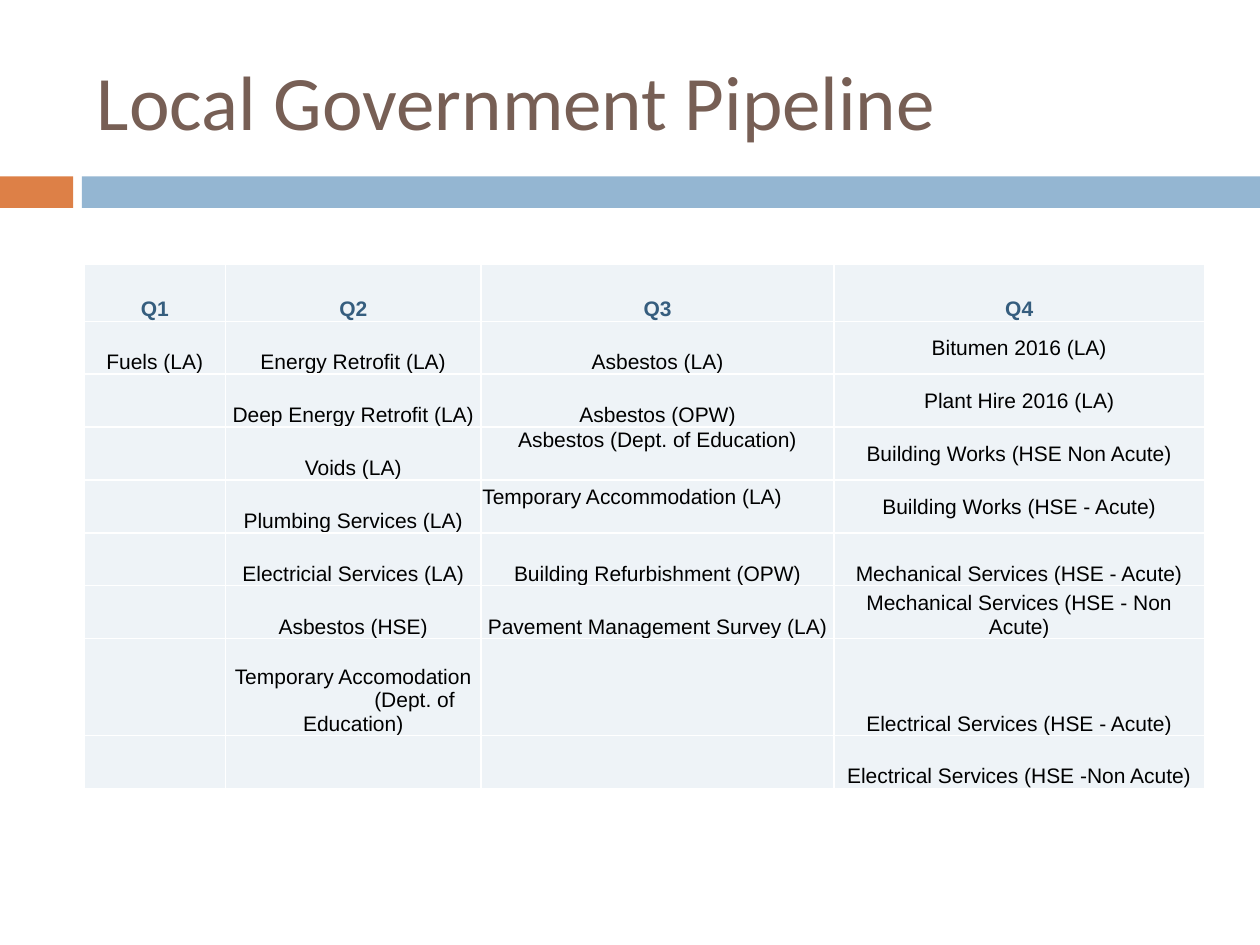
from dataclasses import dataclass

from lxml.etree import SubElement
from pptx import Presentation
from pptx.dml.color import RGBColor
from pptx.enum.shapes import MSO_SHAPE
from pptx.enum.text import MSO_ANCHOR, PP_ALIGN
from pptx.oxml.ns import qn
from pptx.util import Pt


@dataclass(frozen=True)
class Theme:
    orange: str = "DD8047"
    blue: str = "94B6D2"
    title: str = "775F55"
    heading: str = "355D7E"
    text: str = "000000"
    cell: str = "EEF3F7"
    border: str = "FFFFFF"
    title_font: str = "Calibri"
    table_font: str = "Arial"
    title_size: float = 44
    table_size: float = 12
    border_width: float = 1


@dataclass(frozen=True)
class Bar:
    left: float
    width: float
    color: str


@dataclass(frozen=True)
class Entry:
    """Table text; each later line starts a paragraph with a first-line indent."""
    text: str = ""
    anchor: MSO_ANCHOR = MSO_ANCHOR.BOTTOM
    align: PP_ALIGN = PP_ALIGN.CENTER
    margin_bottom: float = 0
    indent: float = 0


THEME = Theme()
PAGE_WIDTH, PAGE_HEIGHT = 720, 540
BAR_TOP, BAR_HEIGHT = 100.8, 18
BARS = [Bar(0, 41.8, THEME.orange), Bar(46.8, 673.2, THEME.blue)]
CONTENT_LEFT = 48.2
TABLE_TOP = 151.2
COLUMN_WIDTHS = [80.6, 146.2, 201.6, 211.7]
HEADER_HEIGHT, ROW_HEIGHT, TALL_HEIGHT = 32.4, 30.24, 55.4
ROW_HEIGHTS = [HEADER_HEIGHT] + [ROW_HEIGHT] * 6 + [TALL_HEIGHT, ROW_HEIGHT]
CELL_MARGIN = 0.7
MIDDLE = MSO_ANCHOR.MIDDLE

QUARTERS = {
    "Q1": [Entry("Fuels (LA)")],
    "Q2": [
        Entry("Energy Retrofit (LA)"),
        Entry("Deep Energy Retrofit (LA)"),
        Entry("Voids (LA)"),
        Entry("Plumbing Services (LA)"),
        Entry("Electricial Services (LA)"),
        Entry("Asbestos (HSE)"),
        Entry("Temporary Accomodation\n(Dept. of Education)", indent=70),
    ],
    "Q3": [
        Entry("Asbestos (LA)"),
        Entry("Asbestos (OPW)"),
        Entry("Asbestos (Dept. of Education)", MSO_ANCHOR.TOP),
        Entry("Temporary Accommodation (LA)", align=PP_ALIGN.LEFT, margin_bottom=13.7),
        Entry("Building Refurbishment (OPW)"),
        Entry("Pavement Management Survey (LA)"),
    ],
    "Q4": [
        Entry("Bitumen 2016 (LA)", MIDDLE),
        Entry("Plant Hire 2016 (LA)", MIDDLE),
        Entry("Building Works (HSE Non Acute)", MIDDLE),
        Entry("Building Works (HSE - Acute)", MIDDLE),
        Entry("Mechanical Services (HSE - Acute)"),
        Entry("Mechanical Services (HSE - Non Acute)"),
        Entry("Electrical Services (HSE - Acute)"),
        Entry("Electrical Services (HSE -Non Acute)"),
    ],
}


def add_span(para, text: str, font: str, size: float, color: str, bold: bool = False) -> None:
    span = para.add_run()
    span.text = text
    span.font.name = font
    span.font.size = Pt(size)
    span.font.bold = bold
    span.font.color.rgb = RGBColor.from_string(color)


def draw_title(page, text: str) -> None:
    box = page.shapes.title
    box.left, box.top, box.width, box.height = Pt(CONTENT_LEFT), Pt(18), Pt(642.2), Pt(77.8)
    box.text_frame.vertical_anchor = MIDDLE
    para = box.text_frame.paragraphs[0]
    para.alignment = PP_ALIGN.LEFT
    add_span(para, text, THEME.title_font, THEME.title_size, THEME.title)


def draw_bar(page, bar: Bar) -> None:
    box = page.shapes.add_shape(
        MSO_SHAPE.RECTANGLE, Pt(bar.left), Pt(BAR_TOP), Pt(bar.width), Pt(BAR_HEIGHT))
    box.shadow.inherit = False
    box.fill.solid()
    box.fill.fore_color.rgb = RGBColor.from_string(bar.color)
    box.line.fill.background()


def set_borders(cell) -> None:
    properties = cell._tc.get_or_add_tcPr()
    for side in ("lnL", "lnR", "lnT", "lnB"):
        line = SubElement(properties, qn(f"a:{side}"), w=str(Pt(THEME.border_width)))
        fill = SubElement(line, qn("a:solidFill"))
        SubElement(fill, qn("a:srgbClr"), val=THEME.border)


def fill_cell(cell, entry: Entry, heading: bool) -> None:
    set_borders(cell)
    cell.fill.solid()
    cell.fill.fore_color.rgb = RGBColor.from_string(THEME.cell)
    cell.margin_left = cell.margin_right = cell.margin_top = Pt(CELL_MARGIN)
    cell.margin_bottom = Pt(entry.margin_bottom)
    cell.vertical_anchor = entry.anchor
    if not entry.text:
        return
    frame = cell.text_frame
    color = THEME.heading if heading else THEME.text
    for index, text in enumerate(entry.text.split("\n")):
        para = frame.add_paragraph() if index else frame.paragraphs[0]
        para.alignment = entry.align
        if index:
            properties = para._p.get_or_add_pPr()
            properties.set("marL", "0")
            properties.set("indent", str(Pt(entry.indent)))
        add_span(para, text, THEME.table_font, THEME.table_size, color, heading)


def draw_table(page) -> None:
    table = page.shapes.add_table(
        len(ROW_HEIGHTS), len(COLUMN_WIDTHS), Pt(CONTENT_LEFT), Pt(TABLE_TOP),
        Pt(sum(COLUMN_WIDTHS)), Pt(sum(ROW_HEIGHTS))).table
    table.horz_banding = False
    for row, height in zip(table.rows, ROW_HEIGHTS):
        row.height = Pt(height)
    for column, (quarter, entries) in enumerate(QUARTERS.items()):
        table.columns[column].width = Pt(COLUMN_WIDTHS[column])
        blanks = [Entry()] * (len(ROW_HEIGHTS) - 1 - len(entries))
        for row, entry in enumerate([Entry(quarter), *entries, *blanks]):
            fill_cell(table.cell(row, column), entry, heading=row == 0)


def main() -> None:
    deck = Presentation()
    deck.slide_width, deck.slide_height = Pt(PAGE_WIDTH), Pt(PAGE_HEIGHT)
    page = deck.slides.add_slide(deck.slide_layouts[5])
    for bar in BARS:
        draw_bar(page, bar)
    draw_title(page, "Local Government Pipeline")
    draw_table(page)
    deck.save("out.pptx")


if __name__ == "__main__":
    main()
